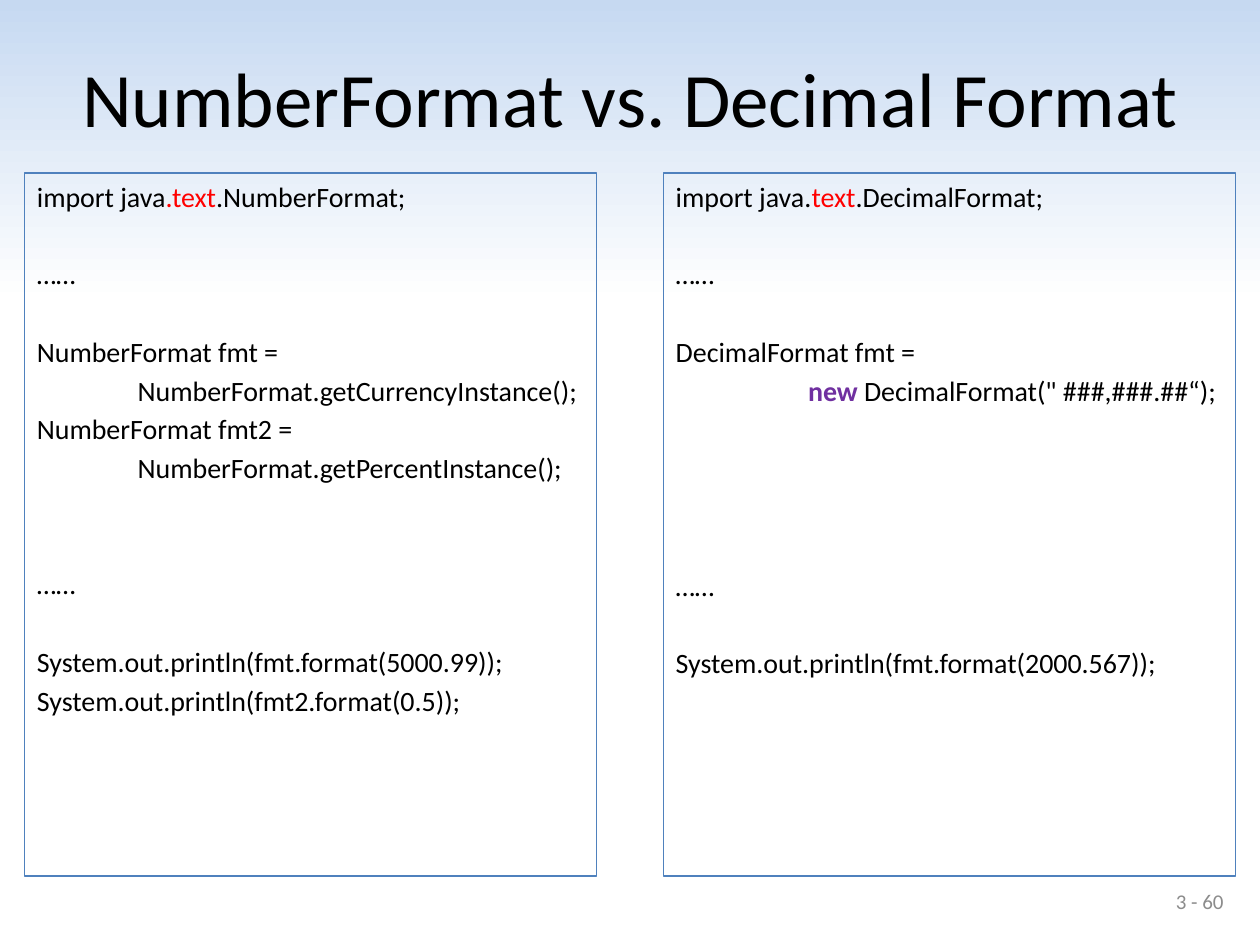
from dataclasses import dataclass

from pptx import Presentation
from pptx.dml.color import RGBColor
from pptx.enum.shapes import MSO_SHAPE
from pptx.enum.text import MSO_ANCHOR, PP_ALIGN
from pptx.util import Inches, Pt

RECTANGLE = MSO_SHAPE.RECTANGLE
TOP, MIDDLE = MSO_ANCHOR.TOP, MSO_ANCHOR.MIDDLE
LEFT, CENTER, RIGHT = PP_ALIGN.LEFT, PP_ALIGN.CENTER, PP_ALIGN.RIGHT
WIDTH, HEIGHT = 10, 7.5


@dataclass(frozen=True)
class Theme:
    font: str = "Calibri"
    title_size: float = 44
    code_size: float = 16
    number_size: float = 12
    line_height: float = 19.53
    line_gap: float = 2.84
    border_width: float = 0.75
    text: str = "000000"
    highlight: str = "FF0000"
    keyword: str = "7030A0"
    muted: str = "8C8C8C"
    border: str = "4F81BD"
    sky: str = "C6D9F1"
    paper: str = "FFFFFF"


@dataclass(frozen=True)
class Box:
    left: float
    top: float
    width: float
    height: float

    def lengths(self):
        return (Inches(self.left * WIDTH), Inches(self.top * HEIGHT),
                Inches(self.width * WIDTH), Inches(self.height * HEIGHT))


THEME = Theme()
PANEL_TOP, PANEL_WIDTH, PANEL_HEIGHT = 0.183, 0.454, 0.744
MARGIN = 0.0195
TITLE_BOX = Box(0.019, 0.04, 0.963, 0.125)
PANEL_BOXES = [Box(left, PANEL_TOP, PANEL_WIDTH, PANEL_HEIGHT)
               for left in (MARGIN, 1 - MARGIN - PANEL_WIDTH)]
NUMBER_BOX = Box(0.748, 0.927, 0.233, 0.053)

NUMBER_CODE = [
    (0, 0, [("import java", {}), (".text", {"color": THEME.highlight}),
            (".NumberFormat;", {})]),
    (2, 0, [("……", {})]),
    (4, 0, [("NumberFormat fmt =", {})]),
    (5, 0.8, [("NumberFormat.getCurrencyInstance();", {})]),
    (6, 0, [("NumberFormat fmt2 =", {})]),
    (7, 0.8, [("NumberFormat.getPercentInstance();", {})]),
    (10, 0, [("……", {})]),
    (12, 0, [("System.out.println(fmt.format(5000.99));", {})]),
    (13, 0, [("System.out.println(fmt2.format(0.5));", {})]),
]
DECIMAL_CODE = [
    (0, 0, [("import java.", {}), ("text", {"color": THEME.highlight}),
            (".DecimalFormat;", {})]),
    (2, 0, [("……", {})]),
    (4, 0, [("DecimalFormat fmt =", {})]),
    (5, 1.05, [("new ", {"color": THEME.keyword, "bold": True}),
               ('DecimalFormat(" ###,###.##“);', {})]),
    (10, 0, [("……", {})]),
    (12, 0, [("System.out.println(fmt.format(2000.567));", {})]),
]


def add_text(para, text, size=THEME.code_size, color=THEME.text, bold=False):
    span = para.add_run()
    span.text = text
    span.font.name = THEME.font
    span.font.size = Pt(size)
    span.font.bold = bold
    span.font.color.rgb = RGBColor.from_string(color)


def paint_background(page):
    fill = page.background.fill
    fill.gradient()
    fill.gradient_angle = 90
    stops = ((0.68, THEME.paper), (1, THEME.sky))
    for stop, (position, color) in zip(fill.gradient_stops, stops):
        stop.position = position
        stop.color.rgb = RGBColor.from_string(color)


def add_label(page, box, text, align, **text_format):
    frame = page.shapes.add_textbox(*box.lengths()).text_frame
    frame.word_wrap = True
    frame.vertical_anchor = MIDDLE
    para = frame.paragraphs[0]
    para.alignment = align
    add_text(para, text, **text_format)


def add_code_panel(page, box, lines):
    panel = page.shapes.add_shape(RECTANGLE, *box.lengths())
    panel.shadow.inherit = False
    panel.fill.background()
    panel.line.color.rgb = RGBColor.from_string(THEME.border)
    panel.line.width = Pt(THEME.border_width)
    frame = panel.text_frame
    frame.word_wrap = True
    frame.vertical_anchor = TOP
    pitch = THEME.line_height + THEME.line_gap
    previous_row = 0
    for index, (row, indent, spans) in enumerate(lines):
        para = frame.add_paragraph() if index else frame.paragraphs[0]
        para.alignment = LEFT
        gap = (row - previous_row) * pitch - THEME.line_height if index else 0
        para.space_before = Pt(round(gap, 2))
        para._p.get_or_add_pPr().set("marL", str(Inches(indent)))
        for text, text_format in spans:
            add_text(para, text, **text_format)
        previous_row = row


def main():
    deck = Presentation()
    deck.slide_width, deck.slide_height = Inches(WIDTH), Inches(HEIGHT)
    page = deck.slides.add_slide(deck.slide_layouts[6])
    paint_background(page)
    add_label(page, TITLE_BOX, "NumberFormat vs. Decimal Format", CENTER,
              size=THEME.title_size)
    for box, lines in zip(PANEL_BOXES, (NUMBER_CODE, DECIMAL_CODE)):
        add_code_panel(page, box, lines)
    add_label(page, NUMBER_BOX, "3 - 60", RIGHT,
              size=THEME.number_size, color=THEME.muted)
    deck.save("out.pptx")


if __name__ == "__main__":
    main()
